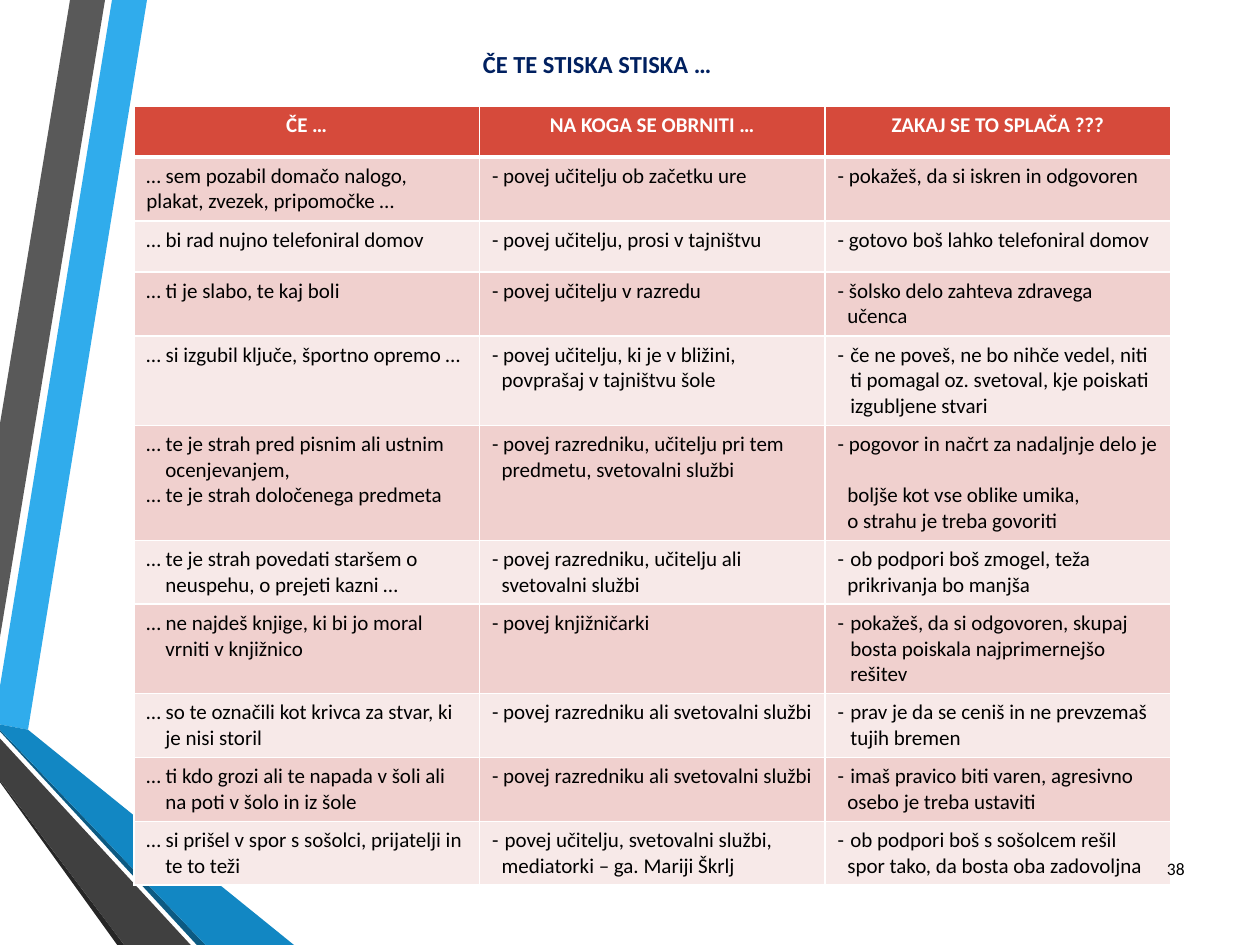
from pptx import Presentation
from pptx.dml.color import RGBColor
from pptx.enum.text import MSO_ANCHOR, PP_ALIGN
from pptx.oxml.ns import qn
from pptx.util import Pt
from lxml import etree

CENTER, RIGHT = PP_ALIGN.CENTER, PP_ALIGN.RIGHT
MIDDLE = MSO_ANCHOR.MIDDLE
FONT = "Calibri"
WHITE = RGBColor(0xFF, 0xFF, 0xFF)
BLACK = RGBColor(0, 0, 0)
NAVY = RGBColor(0x00, 0x20, 0x60)
RED = RGBColor(0xD6, 0x4A, 0x3B)
BANDS = (RGBColor(0xF0, 0xD0, 0xCE), RGBColor(0xF7, 0xE9, 0xE8))

TITLE = "ČE TE STISKA STISKA …"
PAGE_NUMBER = "38"
HEADINGS = ["ČE …", "NA KOGA SE OBRNITI …", "ZAKAJ SE TO SPLAČA ???"]
BULLET = "• "
ADVICE = [
    (["… sem pozabil domačo nalogo, plakat, zvezek, pripomočke …"],
     ["- povej učitelju ob začetku ure"],
     ["- pokažeš, da si iskren in odgovoren"]),
    (["… bi rad nujno telefoniral domov"],
     ["- povej učitelju, prosi v tajništvu"],
     ["- gotovo boš lahko telefoniral domov"]),
    (["… ti je slabo, te kaj boli"],
     ["- povej učitelju v razredu"],
     ["- šolsko delo zahteva zdravega", "učenca"]),
    (["… si izgubil ključe, športno opremo …"],
     ["- povej učitelju, ki je v bližini,", "povprašaj v tajništvu šole"],
     ["• če ne poveš, ne bo nihče vedel, niti ti pomagal oz. svetoval, kje poiskati izgubljene stvari"]),
    (["… te je strah pred pisnim ali ustnim", "ocenjevanjem,", "… te je strah določenega predmeta"],
     ["- povej razredniku, učitelju pri tem", "predmetu, svetovalni službi"],
     ["- pogovor in načrt za nadaljnje delo je", "boljše kot vse oblike umika,",
      "o strahu je treba govoriti"]),
    (["… te je strah povedati staršem o", "neuspehu, o prejeti kazni …"],
     ["- povej razredniku, učitelju ali", "svetovalni službi"],
     ["• ob podpori boš zmogel, teža", "prikrivanja bo manjša"]),
    (["… ne najdeš knjige, ki bi jo moral", "vrniti v knjižnico"],
     ["- povej knjižničarki"],
     ["• pokažeš, da si odgovoren, skupaj bosta poiskala najprimernejšo rešitev"]),
    (["… so te označili kot krivca za stvar, ki", "je nisi storil"],
     ["- povej razredniku ali svetovalni službi"],
     ["• prav je da se ceniš in ne prevzemaš tujih bremen"]),
    (["… ti kdo grozi ali te napada v šoli ali", "na poti v šolo in iz šole"],
     ["- povej razredniku ali svetovalni službi"],
     ["• imaš pravico biti varen, agresivno", "osebo je treba ustaviti"]),
    (["… si prišel v spor s sošolci, prijatelji in", "te to teži"],
     ["• povej učitelju, svetovalni službi,", "mediatorki – ga. Mariji Škrlj"],
     ["• ob podpori boš s sošolcem rešil", "spor tako, da bosta oba zadovoljna"]),
]
GAP_BEFORE = {"boljše kot vse oblike umika,": 14.65}
CONTINUATION_INDENTS = (10.8, 5.5, 5.5)
BULLET_INDENT = 7.2

RIBBONS = [
    (RGBColor(0x30, 0xAC, 0xEC), [(0, 392), (0, 414), (16, 417), (84, 0), (64, 0)]),
    (RGBColor(0x59, 0x59, 0x59), [(60, 0), (40, 0), (0, 242), (0, 364)]),
    (RGBColor(0x26, 0x26, 0x26), [(0, 446), (0, 447), (67, 540), (71, 540)]),
    (RGBColor(0x0C, 0x5A, 0x82), [(0, 417), (0, 418), (112.5, 540), (117.5, 540)]),
    (RGBColor(0x12, 0x87, 0xC3), [(0, 417), (117.5, 540), (168, 540), (16, 417), (0, 414)]),
    (RGBColor(0x40, 0x40, 0x40), [(0, 446), (71, 540), (109, 540), (0, 422)]),
]


def style(paragraph, size, color, bold=False, align=None):
    paragraph.alignment = align
    for run in paragraph.runs:
        run.font.name, run.font.size = FONT, Pt(size)
        run.font.color.rgb, run.font.bold = color, bold


def indent(paragraph, left, bullet=False):
    properties = paragraph._p.get_or_add_pPr()
    properties.set("marL", str(Pt(left)))
    if bullet:
        properties.set("indent", str(-Pt(left)))
        etree.SubElement(properties, qn("a:buFont"), typeface=FONT)
        etree.SubElement(properties, qn("a:buChar"), char="-")


def add_borders(cell, top, bottom):
    properties = cell._tc.get_or_add_tcPr()
    for side, width in (("L", 1), ("R", 1), ("T", top), ("B", bottom)):
        border = etree.SubElement(properties, qn("a:ln" + side), w=str(Pt(width)))
        fill = etree.SubElement(border, qn("a:solidFill"))
        etree.SubElement(fill, qn("a:srgbClr"), val=str(WHITE))


def fill_cell(cell, lines, column):
    cell.text = "\n".join(line.removeprefix(BULLET) for line in lines)
    for line, paragraph in zip(lines, cell.text_frame.paragraphs):
        if line.startswith(BULLET):
            indent(paragraph, BULLET_INDENT, bullet=True)
        elif not line.startswith(("… ", "- ")):
            indent(paragraph, CONTINUATION_INDENTS[column])
        if line in GAP_BEFORE:
            paragraph.space_before = Pt(GAP_BEFORE[line])
        style(paragraph, 12, BLACK)


presentation = Presentation()
presentation.slide_width, presentation.slide_height = Pt(720), Pt(540)
slide = presentation.slides.add_slide(presentation.slide_layouts[5])

for color, corners in RIBBONS:
    points = [(Pt(x), Pt(y)) for x, y in corners]
    builder = slide.shapes.build_freeform(*points[0], scale=1.0)
    builder.add_line_segments(points[1:], close=True)
    ribbon = builder.convert_to_shape()
    ribbon.shadow.inherit = False
    ribbon.fill.solid()
    ribbon.fill.fore_color.rgb = color
    ribbon.line.fill.background()

title = slide.shapes.title
title.left, title.top, title.width, title.height = Pt(31), Pt(24), Pt(620.6), Pt(25)
title.text_frame.text = TITLE
title.text_frame.vertical_anchor = MIDDLE
style(title.text_frame.paragraphs[0], 14, NAVY, True, CENTER)

row_count = len(ADVICE) + 1
table = slide.shapes.add_table(row_count, len(HEADINGS), Pt(76.5), Pt(60.5),
                               Pt(592.5), Pt(29.25 * row_count)).table
for column, heading in enumerate(HEADINGS):
    cell = table.cell(0, column)
    cell.text = heading
    style(cell.text_frame.paragraphs[0], 12, WHITE, True, CENTER)
    add_borders(cell, 1, 3)
    cell.fill.solid()
    cell.fill.fore_color.rgb = RED
for row, entries in enumerate(ADVICE, start=1):
    for column, lines in enumerate(entries):
        cell = table.cell(row, column)
        fill_cell(cell, lines, column)
        add_borders(cell, 3 if row == 1 else 1, 1)
        cell.fill.solid()
        cell.fill.fore_color.rgb = BANDS[(row - 1) % 2]

page = slide.shapes.add_textbox(Pt(651.5), Pt(481.5), Pt(32.5), Pt(29)).text_frame
page.word_wrap = True
page.vertical_anchor = MIDDLE
page.text = PAGE_NUMBER
style(page.paragraphs[0], 10, BLACK, align=RIGHT)

presentation.save("out.pptx")
